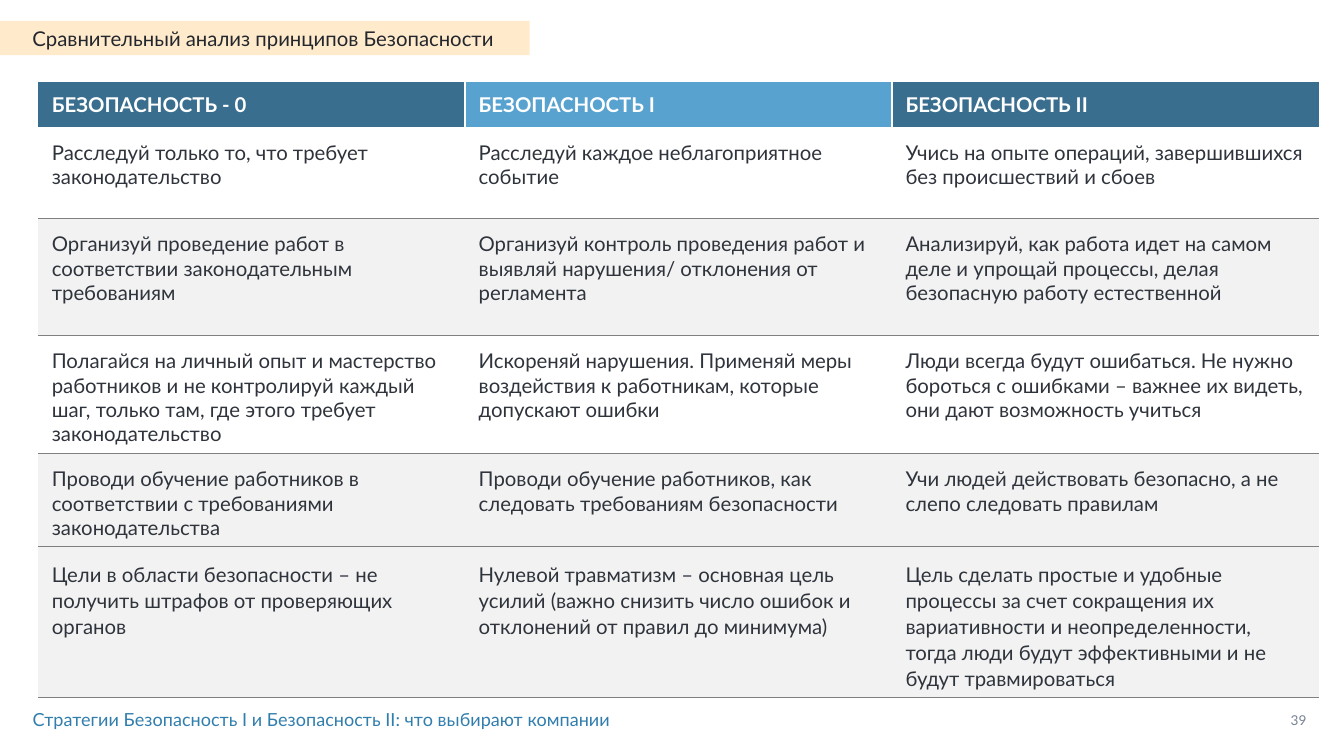
"""Build a slide with a table comparing three safety principles."""
from lxml import etree
from pptx import Presentation, util as u
from pptx.dml.color import RGBColor
from pptx.enum import shapes, text
from pptx.oxml.ns import qn

COLORS = {
    "navy": "3A6E8E", "blue": "58A2D0", "band": "F2F2F2", "rule": "808080",
    "white": "FFFFFF", "body": "2F343C", "peach": "FFEACC", "title": "23272D",
    "footer": "317EAD", "number": "778395",
}
NO_STYLE_NO_GRID = "{2D5ABB26-0587-4C30-8999-92F81FD0307C}"


def write(frame, content, size=9, color="body", bold=False, anchor="MIDDLE",
          align="LEFT", margins=(7.2, 3.6, 7.2, 3.6), spacing=None, after=None):
    frame.word_wrap = True
    frame.vertical_anchor = text.MSO_ANCHOR[anchor]
    (frame.margin_left, frame.margin_top,
     frame.margin_right, frame.margin_bottom) = [u.Pt(margin) for margin in margins]
    paragraph = frame.paragraphs[0]
    paragraph.alignment = text.PP_ALIGN[align]
    if spacing:
        paragraph.line_spacing = spacing
    if after:
        paragraph.space_after = u.Pt(after)
    run = paragraph.add_run()
    run.text = content
    run.font.name = "Lato"
    run.font.size = u.Pt(size)
    run.font.bold = bold
    run.font.color.rgb = RGBColor.from_string(COLORS[color])


def add_border(cell, side, color, width):
    properties = cell._tc.get_or_add_tcPr()
    line = etree.SubElement(properties, qn(f"a:ln{side}"), w=str(u.Pt(width)))
    fill = etree.SubElement(line, qn("a:solidFill"))
    etree.SubElement(fill, qn("a:srgbClr"), val=COLORS[color])


presentation = Presentation()
presentation.slide_width = u.Pt(595.44)
presentation.slide_height = u.Pt(334.8)
slide = presentation.slides.add_slide(presentation.slide_layouts[6])

page_number = slide.shapes.add_textbox(u.Pt(563.8), u.Pt(315.4), u.Pt(23), u.Pt(7.2))
write(page_number.text_frame, "39", size=6, color="number", align="CENTER", margins=(0, 0, 0, 0))

headers = ["БЕЗОПАСНОСТЬ - 0", "БЕЗОПАСНОСТЬ I", "БЕЗОПАСНОСТЬ II"]
header_fills = ["navy", "blue", "navy"]
principles = [
    ["Расследуй только то, что требует законодательство",
     "Расследуй каждое неблагоприятное событие",
     "Учись на опыте операций, завершившихся без происшествий и сбоев"],
    ["Организуй проведение работ в соответствии законодательным требованиям",
     "Организуй контроль проведения работ и выявляй нарушения/ отклонения от регламента",
     "Анализируй, как работа идет на самом деле и упрощай процессы, делая безопасную работу "
     "естественной"],
    ["Полагайся на личный опыт и мастерство работников и не контролируй каждый шаг, только там, "
     "где этого требует законодательство",
     "Искореняй нарушения. Применяй меры воздействия к работникам, которые допускают ошибки",
     "Люди всегда будут ошибаться. Не нужно бороться с ошибками – важнее их видеть, они дают "
     "возможность учиться"],
    ["Проводи обучение работников в соответствии с требованиями законодательства",
     "Проводи обучение работников, как следовать требованиям безопасности",
     "Учи людей действовать безопасно, а не слепо следовать правилам"],
    ["Цели в области безопасности – не получить штрафов от проверяющих органов",
     "Нулевой травматизм – основная цель усилий (важно снизить число ошибок и отклонений от "
     "правил до минимума)",
     "Цель сделать простые и удобные процессы за счет сокращения их вариативности и "
     "неопределенности, тогда люди будут эффективными и не будут травмироваться"],
]
row_fills = [None, "band", None, "band", "band"]
row_heights = [20, 40.5, 51.8, 51.8, 41, 66.4]

table_frame = slide.shapes.add_table(
    len(row_heights), len(headers), u.Pt(17), u.Pt(36.2), u.Pt(567.3), u.Pt(sum(row_heights)))
table = table_frame.table
table.first_row = table.horz_banding = False
table._tbl.tblPr.find(qn("a:tableStyleId")).text = NO_STYLE_NO_GRID
for column in table.columns:
    column.width = u.Pt(189.1)
for row, height in zip(table.rows, row_heights):
    row.height = u.Pt(height)

for index, (header, fill) in enumerate(zip(headers, header_fills)):
    cell = table.cell(0, index)
    if index > 0:
        add_border(cell, "L", "white", 1)
    if index < len(headers) - 1:
        add_border(cell, "R", "white", 1)
    cell.fill.solid()
    cell.fill.fore_color.rgb = RGBColor.from_string(COLORS[fill])
    cell.vertical_anchor = text.MSO_ANCHOR.MIDDLE
    cell.margin_left = cell.margin_right = u.Pt(6)
    cell.margin_top = cell.margin_bottom = u.Pt(3)
    write(cell.text_frame, header, color="white", bold=True)

for row_index, (principle, fill) in enumerate(zip(principles, row_fills), start=1):
    is_last = row_index == len(principles)
    for column_index, statement in enumerate(principle):
        cell = table.cell(row_index, column_index)
        if row_index > 1:
            add_border(cell, "T", "rule", 0.5)
        add_border(cell, "B", "rule", 0.5)
        if fill:
            cell.fill.solid()
            cell.fill.fore_color.rgb = RGBColor.from_string(COLORS[fill])
        else:
            cell.fill.background()
        cell.vertical_anchor = text.MSO_ANCHOR.TOP
        cell.margin_left = cell.margin_right = u.Pt(6)
        cell.margin_top = u.Pt(6)
        cell.margin_bottom = u.Pt(3)
        write(cell.text_frame, statement, anchor="TOP",
              spacing=1.07 if is_last else None, after=8 if is_last else None)

title = slide.shapes.add_shape(
    shapes.MSO_SHAPE.RECTANGLE, u.Pt(0), u.Pt(9.3), u.Pt(234.7), u.Pt(15.1))
title.shadow.inherit = False
title.fill.solid()
title.fill.fore_color.rgb = RGBColor.from_string(COLORS["peach"])
title.line.fill.background()
write(title.text_frame, "Сравнительный анализ принципов Безопасности", color="title",
      margins=(14.4, 3.6, 7.2, 3.6))

footer = slide.shapes.add_textbox(u.Pt(7.4), u.Pt(309.8), u.Pt(344), u.Pt(17.2))
write(footer.text_frame, "Стратегии Безопасность I и Безопасность II: что выбирают компании",
      size=8, color="footer")

presentation.save("out.pptx")
